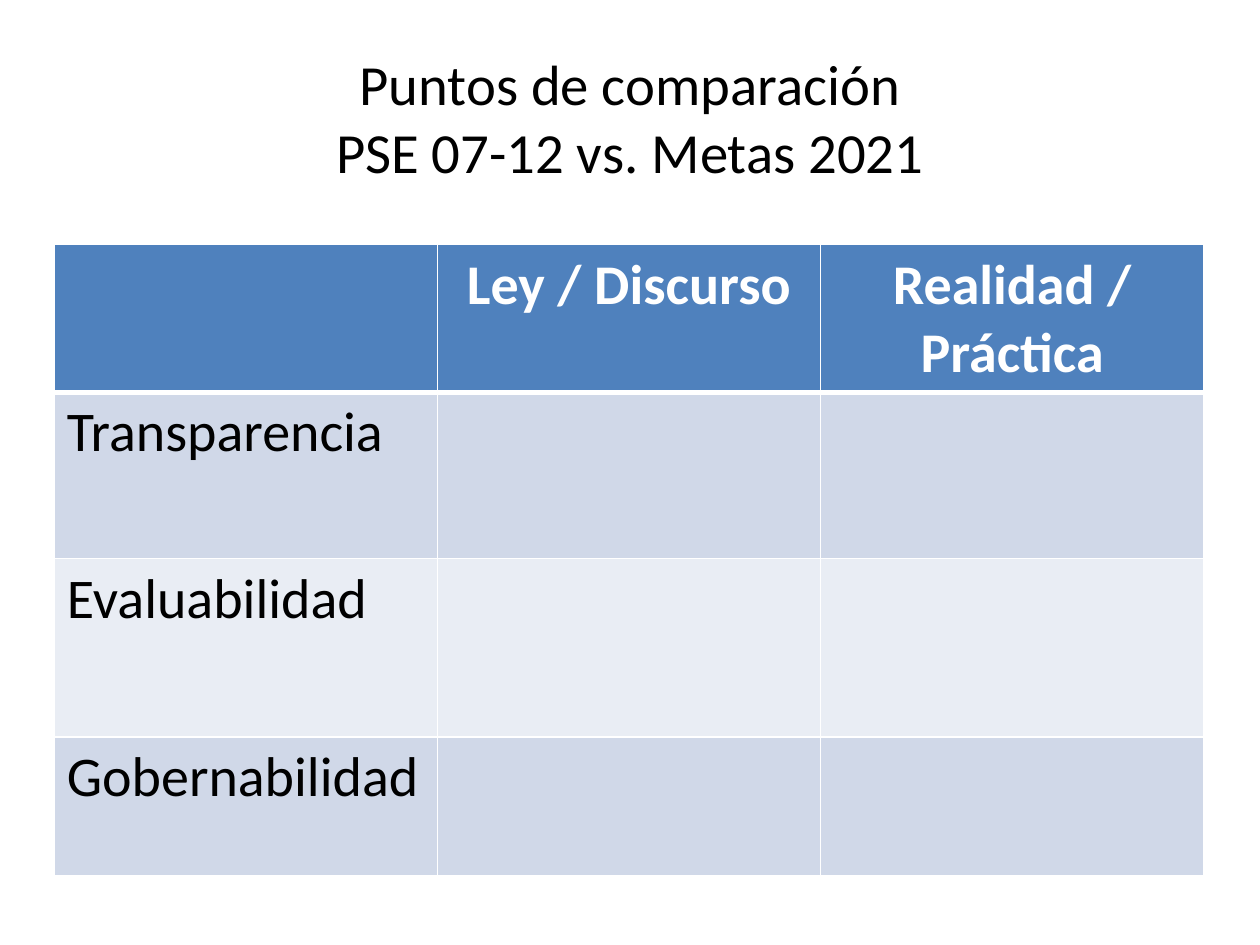
from dataclasses import dataclass

from lxml import etree
from pptx import Presentation
from pptx.dml.color import RGBColor
from pptx.enum.text import MSO_ANCHOR, PP_ALIGN
from pptx.oxml.ns import qn
from pptx.util import Pt

CENTER, LEFT = PP_ALIGN.CENTER, PP_ALIGN.LEFT
MIDDLE = MSO_ANCHOR.MIDDLE

BLACK = RGBColor(0x00, 0x00, 0x00)
WHITE = RGBColor(0xFF, 0xFF, 0xFF)
HEADER_BLUE = RGBColor(0x4F, 0x81, 0xBD)
BAND_DARK = RGBColor(0xD0, 0xD8, 0xE8)
BAND_LIGHT = RGBColor(0xE9, 0xED, 0xF4)

TITLE_FONT = {"name": "Calibri", "size": Pt(32.4), "bold": False}
HEADER_FONT = {"name": "Calibri", "size": Pt(32), "bold": True}
BODY_FONT = {**HEADER_FONT, "bold": False}

TITLE_LINES = ("Puntos de comparación", "PSE 07-12 vs. Metas 2021")
TABLE_LEFT, TABLE_TOP = Pt(31), Pt(139.7)
COLUMN_WIDTH = Pt(219)
THIN, THICK = Pt(1), Pt(3)


@dataclass(frozen=True)
class TableRow:
    texts: tuple[str, str, str]
    height: float
    fill: RGBColor
    is_header: bool = False


ROWS = (
    TableRow(("", "Ley / Discurso", "Realidad / Práctica"), 84.5, HEADER_BLUE, True),
    TableRow(("Transparencia", "", ""), 95, BAND_DARK),
    TableRow(("Evaluabilidad", "", ""), 102, BAND_LIGHT),
    TableRow(("Gobernabilidad", "", ""), 79.4, BAND_DARK),
)


def format_font(font, values: dict, color: RGBColor) -> None:
    for attribute, value in values.items():
        setattr(font, attribute, value)
    font.color.rgb = color


def set_borders(cell, top: int, bottom: int) -> None:
    """Draw white lines on all sides; the fill must be set afterwards."""
    properties = cell._tc.get_or_add_tcPr()
    for side, width in {"L": THIN, "R": THIN, "T": top, "B": bottom}.items():
        line = etree.SubElement(properties, qn(f"a:ln{side}"), w=str(width))
        solid_fill = etree.SubElement(line, qn("a:solidFill"))
        etree.SubElement(solid_fill, qn("a:srgbClr"), val=str(WHITE))


def add_title(slide) -> None:
    title = slide.shapes.add_textbox(Pt(36), Pt(21.6), Pt(648), Pt(90))
    frame = title.text_frame
    frame.word_wrap = True
    frame.vertical_anchor = MIDDLE
    paragraph = frame.paragraphs[0]
    paragraph.alignment = CENTER
    for index, text in enumerate(TITLE_LINES):
        if index:
            paragraph.add_line_break()
        run = paragraph.add_run()
        run.text = text
        format_font(run.font, TITLE_FONT, BLACK)


def fill_cell(cell, text: str, row: TableRow, top: int) -> None:
    set_borders(cell, top, THICK if row.is_header else THIN)
    cell.fill.solid()
    cell.fill.fore_color.rgb = row.fill
    if not text:
        return
    paragraph = cell.text_frame.paragraphs[0]
    paragraph.alignment = CENTER if row.is_header else LEFT
    run = paragraph.add_run()
    run.text = text
    if row.is_header:
        format_font(run.font, HEADER_FONT, WHITE)
    else:
        format_font(run.font, BODY_FONT, BLACK)


def add_comparison_table(slide) -> None:
    column_count = len(ROWS[0].texts)
    height = Pt(sum(row.height for row in ROWS))
    table = slide.shapes.add_table(
        len(ROWS), column_count, TABLE_LEFT, TABLE_TOP, COLUMN_WIDTH * column_count, height
    ).table
    for column in table.columns:
        column.width = COLUMN_WIDTH
    for index, row in enumerate(ROWS):
        table.rows[index].height = Pt(row.height)
        top = THICK if index and ROWS[index - 1].is_header else THIN
        for column_index, text in enumerate(row.texts):
            fill_cell(table.cell(index, column_index), text, row, top)


def main() -> None:
    presentation = Presentation()
    presentation.slide_width, presentation.slide_height = Pt(720), Pt(540)
    slide = presentation.slides.add_slide(presentation.slide_layouts[6])
    add_title(slide)
    add_comparison_table(slide)
    presentation.save("out.pptx")


if __name__ == "__main__":
    main()
